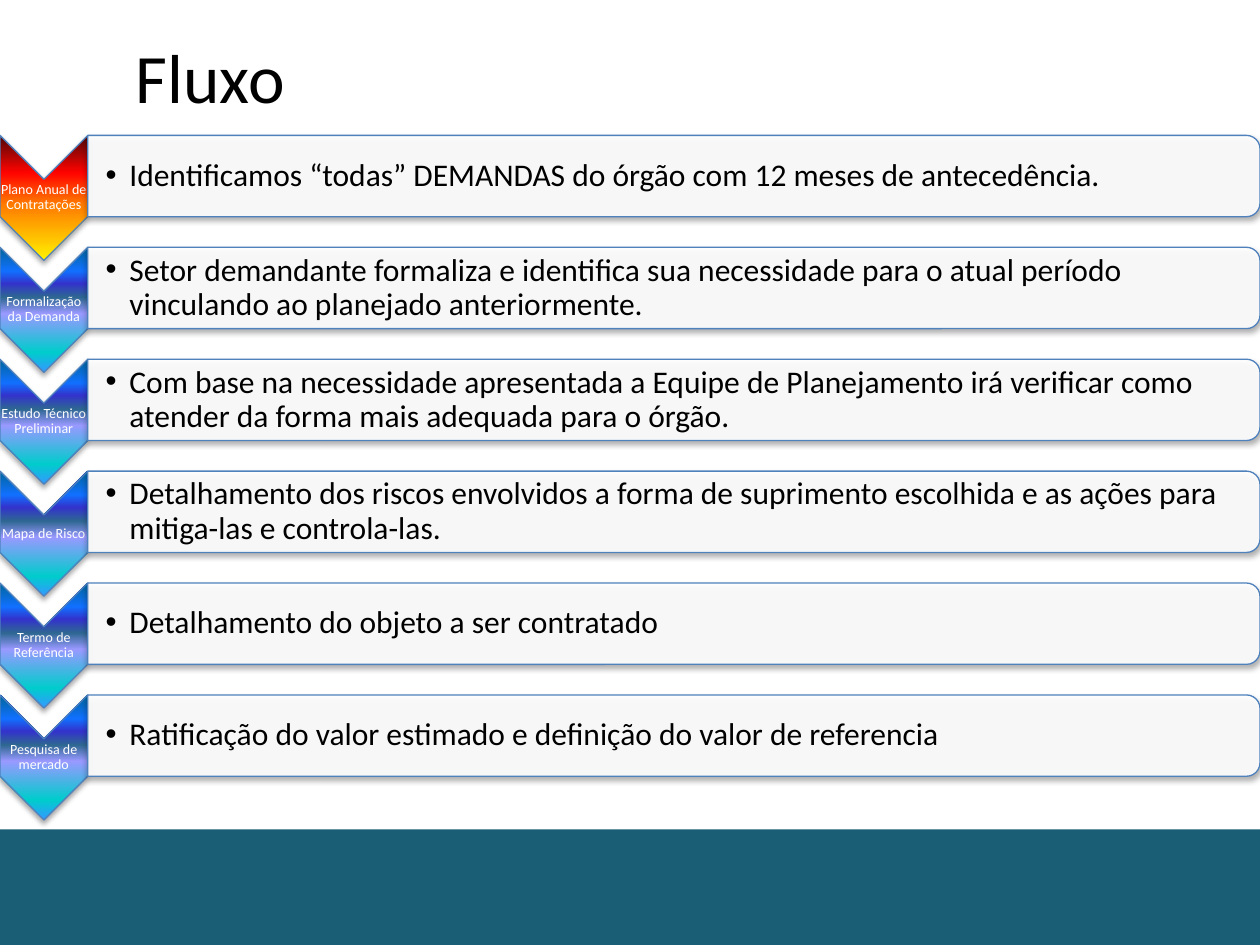
import pptx
import pptx.util
import pptx.dml.color
import pptx.enum.shapes
import pptx.enum.text
import pptx.oxml
import pptx.oxml.ns

Cm, Pt = pptx.util.Cm, pptx.util.Pt
RGB = pptx.dml.color.RGBColor
Kind = pptx.enum.shapes.MSO_SHAPE
Align = pptx.enum.text.PP_ALIGN
Anchor = pptx.enum.text.MSO_ANCHOR
qn = pptx.oxml.ns.qn

# Content: step name, description
TITLE = "Fluxo"
STEPS = [
    ("Plano Anual de Contratações",
     "Identificamos “todas” DEMANDAS do órgão com 12 meses de antecedência."),
    ("Formalização da Demanda",
     "Setor demandante formaliza e identifica sua necessidade para o atual período "
     "vinculando ao planejado anteriormente."),
    ("Estudo Técnico Preliminar",
     "Com base na necessidade apresentada a Equipe de Planejamento irá verificar como "
     "atender da forma mais adequada para o órgão."),
    ("Mapa de Risco",
     "Detalhamento dos riscos envolvidos a forma de suprimento escolhida e as ações para "
     "mitiga-las e controla-las."),
    ("Termo de Referência", "Detalhamento do objeto a ser contratado"),
    ("Pesquisa de mercado",
     "Ratificação do valor estimado e definição do valor de referencia"),
]

# Colours
BLACK = RGB(0x00, 0x00, 0x00)
WHITE = RGB(0xFF, 0xFF, 0xFF)
TEAL = RGB(0x1A, 0x5E, 0x75)
EDGE = RGB(0x4F, 0x81, 0xBD)
FIRE = [(0, RGB(0xFF, 0xF2, 0x00)), (45, RGB(0xFF, 0x7A, 0x00)),
        (70, RGB(0xFF, 0x03, 0x00)), (100, RGB(0x4D, 0x08, 0x08))]
OCEAN = [(0, RGB(0x33, 0x99, 0xFF)), (16, RGB(0x00, 0xCC, 0xCC)),
         (47, RGB(0x99, 0x99, 0xFF)), (60, RGB(0x2E, 0x67, 0x92)),
         (71, RGB(0x33, 0x33, 0xCC)), (81, RGB(0x11, 0x70, 0xFF)),
         (100, RGB(0x00, 0x66, 0x99))]

# Layout in cm
WIDE, HIGH = 25.4, 19.05
TOP, PITCH = 2.73, 11.28 / 5
TIP_W, TIP_H, BAR_H = 1.77, 2.52, 1.64

# Text formats
HEAD = {"size": Pt(39.6), "color": BLACK}
LABEL = {"size": Pt(8), "color": WHITE}
BODY = {"size": Pt(18), "color": BLACK}


def add(root, tag, **attrs):
    """Append a drawing element with the given attributes."""
    node = pptx.oxml.parse_xml(f"<a:{tag} {pptx.oxml.ns.nsdecls('a')}/>")
    for key, val in attrs.items():
        node.set(key, str(val))
    root.append(node)
    return node


def turned(kind, x, y, w, h):
    """Add a shape turned a quarter, filling the box x, y, w, h as seen."""
    shape = slide.shapes.add_shape(
        kind, Cm(x + (w - h) / 2), Cm(y + (h - w) / 2), Cm(h), Cm(w))
    shape.rotation = 90
    shape.line.color.rgb = EDGE
    shape.line.width = Pt(0.75)
    shape.shadow.inherit = False
    glow = add(shape._element.spPr.find(qn("a:effectLst")), "outerShdw",
               blurRad=Pt(3.1), dist=Pt(1.8), dir=5400000, rotWithShape=0)
    add(add(glow, "srgbClr", val=BLACK), "alpha", val=35000)
    return shape


def blend(shape, stops):
    """Fill a shape with a gradient running upwards on the slide."""
    shape.fill.gradient()
    shape.fill.gradient_angle = 90
    grad = shape._element.spPr.find(qn("a:gradFill"))
    grad.set("rotWithShape", "0")
    track = grad.find(qn("a:gsLst"))
    for old in list(track):
        track.remove(old)
    for pos, color in stops:
        add(add(track, "gs", pos=pos * 1000), "srgbClr", val=color)


def write(text, box, style, pads=None, align=Align.LEFT, space=0.9, bullet=False):
    """Add a text box; pads are left, top, right and bottom insets."""
    frame = slide.shapes.add_textbox(*map(Cm, box)).text_frame
    frame.word_wrap = True
    frame.vertical_anchor = Anchor.MIDDLE
    for side, pad in zip(("left", "top", "right", "bottom"), pads or ()):
        setattr(frame, f"margin_{side}", Cm(pad))
    para = frame.paragraphs[0]
    para.text = text
    para.alignment = align
    para.line_spacing = space
    if bullet:
        props = para._p.get_or_add_pPr()
        props.set("marL", str(Cm(0.48)))
        props.set("indent", str(-Cm(0.48)))
        add(props, "buFont", typeface="Arial")
        add(props, "buChar", char="•")
    font = para.runs[0].font
    font.name = "Calibri"
    for key, val in style.items():
        if key == "color":
            font.color.rgb = val
        else:
            setattr(font, key, val)


deck = pptx.Presentation()
deck.slide_width, deck.slide_height = Cm(WIDE), Cm(HIGH)
slide = deck.slides.add_slide(deck.slide_layouts[6])

# Footer band
band = slide.shapes.add_shape(Kind.RECTANGLE, 0, Cm(16.72), Cm(WIDE), Cm(HIGH - 16.72))
band.fill.solid()
band.fill.fore_color.rgb = TEAL
band.line.fill.background()
band.shadow.inherit = False

# Title
write(TITLE, (2.49, 0.53, 21.21, 2.01), HEAD, space=1.0)

# Steps: arrow with its name, bar with its description
for i, (name, text) in enumerate(STEPS):
    y = TOP + i * PITCH
    tip = turned(Kind.CHEVRON, 0, y, TIP_W, TIP_H)
    blend(tip, OCEAN if i else FIRE)
    write(name, (0, y + 0.88, TIP_W, 0.76), LABEL, [0.01] * 4, Align.CENTER)

    bar = turned(Kind.ROUND_2_SAME_RECTANGLE, TIP_W, y, WIDE - TIP_W, BAR_H)
    bar.fill.solid()
    bar.fill.fore_color.rgb = WHITE
    tint = bar._element.spPr.find(qn("a:solidFill"))[0]
    add(tint, "alpha", val=90000)
    write(text, (TIP_W, y + 0.08, 23.55, BAR_H - 0.16), BODY,
          (0.36, 0.03, 0.03, 0.03), bullet=True)

deck.save("out.pptx")
